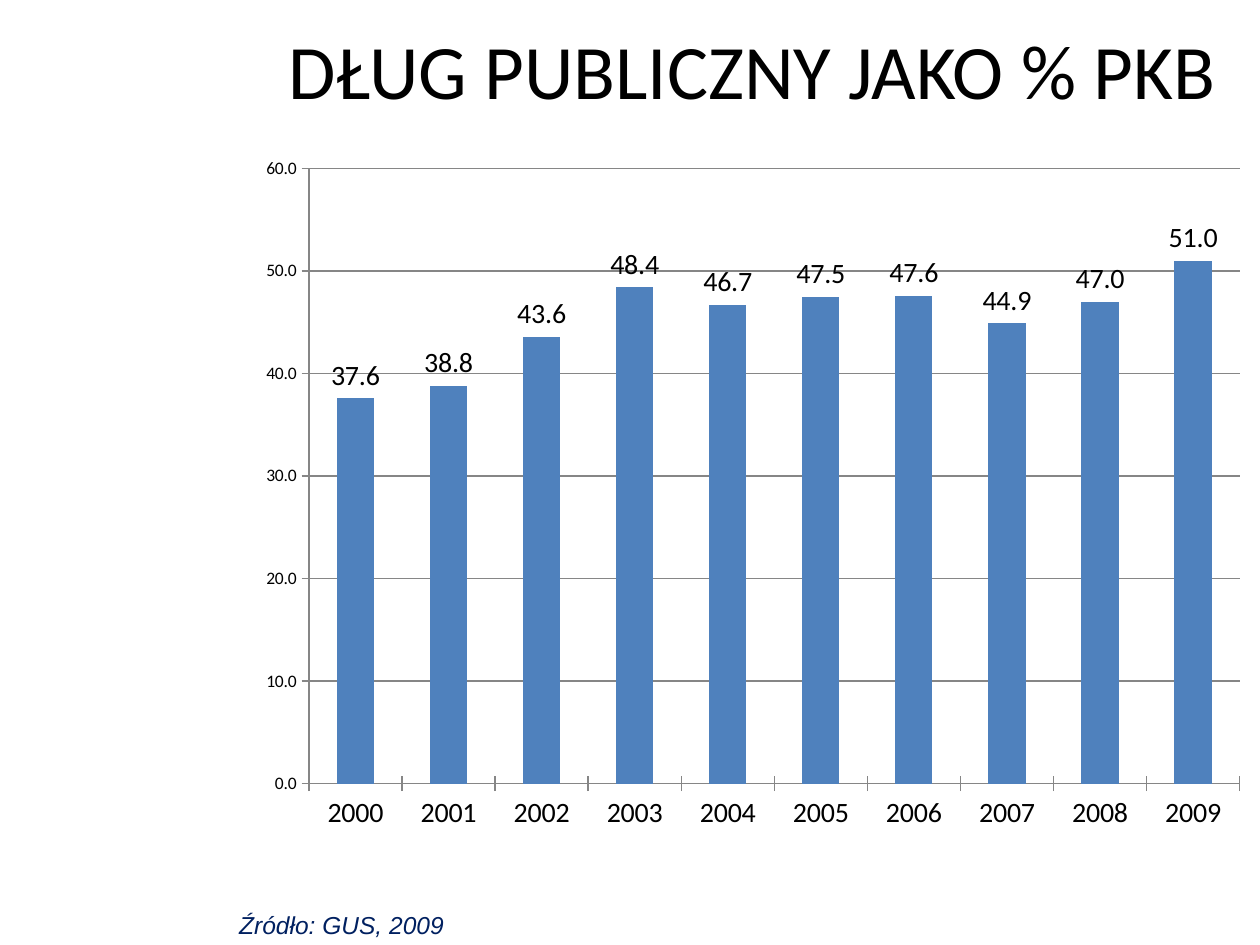
from lxml.etree import SubElement
from pptx import Presentation
from pptx.chart.data import CategoryChartData
from pptx.dml.color import RGBColor
from pptx.enum.chart import XL_CHART_TYPE, XL_LABEL_POSITION, XL_TICK_MARK
from pptx.enum.text import MSO_ANCHOR, MSO_AUTO_SIZE, PP_ALIGN
from pptx.oxml.ns import qn
from pptx.util import Inches, Pt

BLACK = RGBColor(0x00, 0x00, 0x00)
NAVY = RGBColor(0x00, 0x20, 0x60)
BLUE = RGBColor(0x4F, 0x81, 0xBD)
GREY = RGBColor(0x86, 0x86, 0x86)

WIDTH, HEIGHT = Inches(10), Inches(7.5)
DEBT = {
    "2000": 37.6, "2001": 38.8, "2002": 43.6, "2003": 48.4, "2004": 46.7,
    "2005": 47.5, "2006": 47.6, "2007": 44.9, "2008": 47.0, "2009": 51.0,
}
PLOT_SHARES = {"x": 0.06, "y": 0.03, "w": 0.92, "h": 0.88}


def area(left, top, width, height):
    """Turn shares of the slide's size into lengths."""
    return (int(left * WIDTH), int(top * HEIGHT),
            int(width * WIDTH), int(height * HEIGHT))


def format_font(font, color, **values):
    for name, value in values.items():
        setattr(font, name, value)
    font.color.rgb = color


def add_title(page, text):
    title = page.shapes.title
    title.left, title.top, title.width, title.height = area(0.195, 0, 0.805, 0.145)
    frame = title.text_frame
    frame.text = text
    frame.vertical_anchor = MSO_ANCHOR.MIDDLE
    para = frame.paragraphs[0]
    para.alignment = PP_ALIGN.CENTER
    format_font(para.runs[0].font, BLACK, name="Calibri", size=Pt(44))


def add_source_note(page, text):
    box = page.shapes.add_textbox(*area(0.18, 0.956, 0.441, 0.045))
    frame = box.text_frame
    frame.word_wrap = True
    frame.auto_size = MSO_AUTO_SIZE.SHAPE_TO_FIT_TEXT
    frame.text = text
    format_font(frame.paragraphs[0].runs[0].font, NAVY,
                name="Arial", size=Pt(14), italic=True)


def place_plot(chart, shares):
    """Fix the inner plot area at shares of the chart's size."""
    plot_area = chart.plots[0]._element.getparent()
    layout = plot_area.find(qn("c:layout"))
    if layout is None:
        layout = SubElement(plot_area, qn("c:layout"))
        plot_area.insert(0, layout)
    manual = SubElement(layout, qn("c:manualLayout"))
    settings = {"layoutTarget": "inner", "xMode": "edge", "yMode": "edge", **shares}
    for name, value in settings.items():
        SubElement(manual, qn(f"c:{name}")).set("val", str(value))


def format_axis(axis, size):
    axis.major_tick_mark = XL_TICK_MARK.CROSS
    axis.minor_tick_mark = XL_TICK_MARK.NONE
    axis.format.line.color.rgb = GREY
    format_font(axis.tick_labels.font, BLACK, name="Calibri", size=Pt(size))


def add_debt_chart(page):
    data = CategoryChartData(number_format="0.0")
    data.categories = list(DEBT)
    data.add_series("Series 1", list(DEBT.values()))
    chart = page.shapes.add_chart(
        XL_CHART_TYPE.COLUMN_CLUSTERED, *area(0.197, 0.156, 0.803, 0.74), data).chart
    chart.has_legend = chart.has_title = False
    format_font(chart.font, BLACK, name="Calibri", size=Pt(10))
    place_plot(chart, PLOT_SHARES)

    format_axis(chart.category_axis, 16)
    values = chart.value_axis
    format_axis(values, 10)
    values.minimum_scale, values.maximum_scale, values.major_unit = 0, 60, 10
    values.tick_labels.number_format = "0.0"
    values.tick_labels.number_format_is_linked = False
    values.major_gridlines.format.line.color.rgb = GREY

    plot = chart.plots[0]
    plot.gap_width = 150
    plot.vary_by_categories = False
    columns = plot.series[0]
    columns.format.fill.solid()
    columns.format.fill.fore_color.rgb = BLUE
    labels = columns.data_labels
    label_format = {
        "show_value": True, "position": XL_LABEL_POSITION.OUTSIDE_END,
        "number_format": "0.0", "number_format_is_linked": False,
    }
    for name, value in label_format.items():
        setattr(labels, name, value)
    format_font(labels.font, BLACK, name="Calibri", size=Pt(16))


def main():
    deck = Presentation()
    deck.slide_width, deck.slide_height = WIDTH, HEIGHT
    page = deck.slides.add_slide(deck.slide_layouts.get_by_name("Title Only"))
    add_debt_chart(page)
    add_source_note(page, "Źródło: GUS, 2009")
    add_title(page, "DŁUG PUBLICZNY JAKO % PKB")
    deck.save("out.pptx")


if __name__ == "__main__":
    main()
